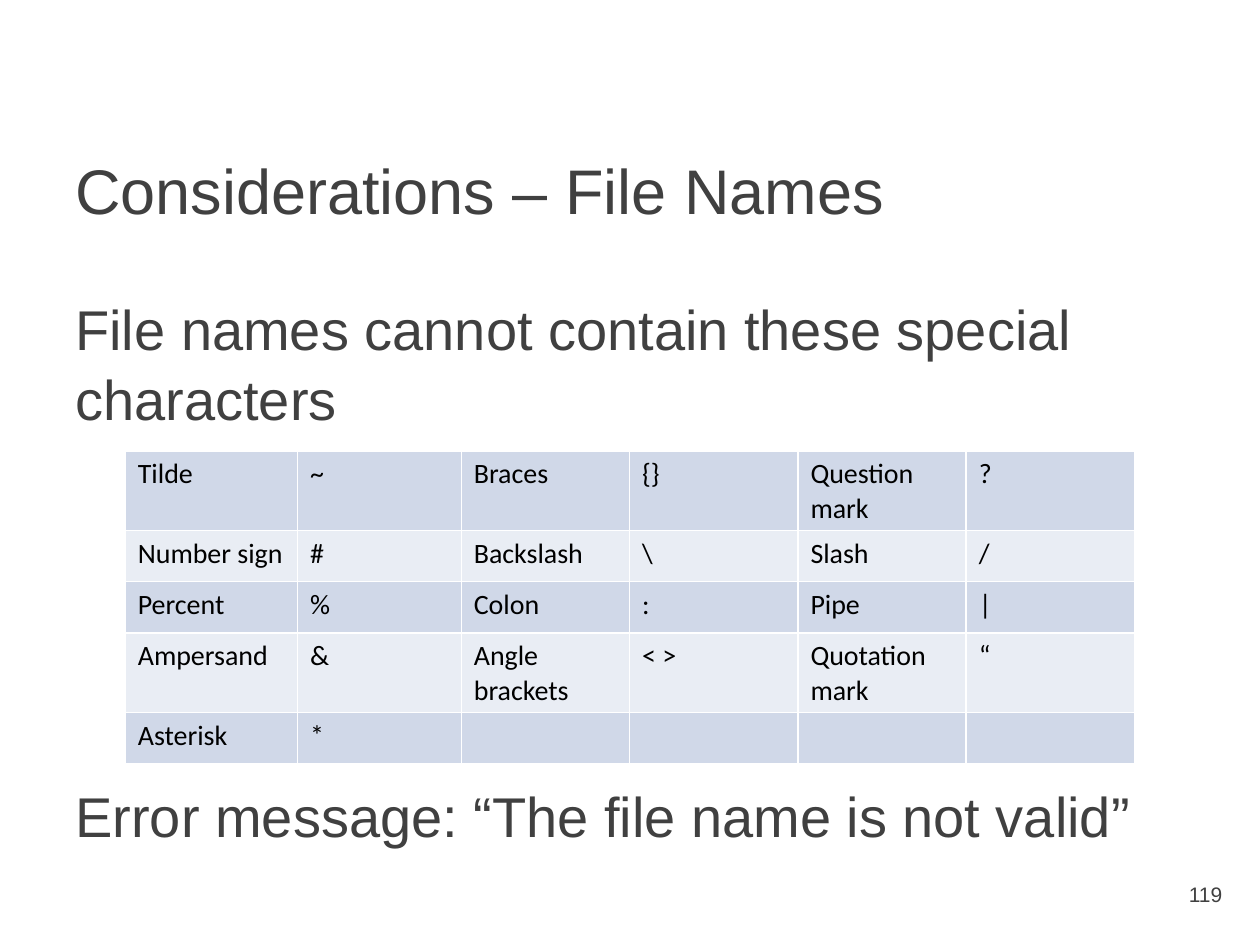
"""Build a slide listing the special characters that file names cannot contain."""
import pptx
import pptx.dml.color
import pptx.enum.text
import pptx.oxml
import pptx.oxml.ns
import pptx.util

Pt = pptx.util.Pt
ALIGN = pptx.enum.text.PP_ALIGN
ANCHOR = pptx.enum.text.MSO_ANCHOR

TITLE = "Considerations – File Names"
STATEMENTS = [
    "File names cannot contain these special characters",
    "Error message: “The file name is not valid”",
]
PAGE_NUMBER = "119"
CHARACTERS = [
    ("Tilde", "~", "Braces", "{}", "Question mark", "?"),
    ("Number sign", "#", "Backslash", "\\", "Slash", "/"),
    ("Percent", "%", "Colon", ":", "Pipe", "|"),
    ("Ampersand", "&", "Angle brackets", "< >", "Quotation mark", "“"),
    ("Asterisk", "*", "", "", "", ""),
]
COLUMN_WIDTHS = [98.4, 93.6, 96.2, 96.2, 96.2, 96.2]
ROW_HEIGHT = 29.2
BAND_FILLS = ["D0D8E8", "E9EDF4"]
GREY, BLACK, WHITE = "404040", "000000", "FFFFFF"


def color(value):
    return pptx.dml.color.RGBColor.from_string(value)


def write(frame, lines, size=16, font="Arial", fill=GREY, align=ALIGN.LEFT, gap=0, spacing=None):
    frame.word_wrap = True
    for index, line in enumerate(lines):
        para = frame.paragraphs[0] if index == 0 else frame.add_paragraph()
        para.alignment = align
        para.line_spacing = spacing
        if index:
            para.space_before = Pt(gap)
        para.font.size = Pt(size)
        span = para.add_run()
        span.text = line
        span.font.size = Pt(size)
        span.font.name = font
        span.font.color.rgb = color(fill)


def add_text(page, area, lines, anchor=ANCHOR.TOP, **style):
    box = page.shapes.add_textbox(*map(Pt, area))
    box.text_frame.vertical_anchor = anchor
    write(box.text_frame, lines, **style)


def add_borders(cell, fill):
    properties = cell._tc.get_or_add_tcPr()
    for index, side in enumerate(("lnL", "lnR", "lnT", "lnB")):
        properties.insert(index, pptx.oxml.parse_xml(
            f'<a:{side} {pptx.oxml.ns.nsdecls("a")} w="12700"><a:solidFill>'
            f'<a:srgbClr val="{fill}"/></a:solidFill></a:{side}>'))


def add_character_table(page, left, top):
    height = ROW_HEIGHT * len(CHARACTERS)
    table = page.shapes.add_table(
        len(CHARACTERS), len(COLUMN_WIDTHS),
        Pt(left), Pt(top), Pt(sum(COLUMN_WIDTHS)), Pt(height)).table
    table.first_row = False
    table.horz_banding = False
    for column, width in zip(table.columns, COLUMN_WIDTHS):
        column.width = Pt(width)
    for row_index, values in enumerate(CHARACTERS):
        table.rows[row_index].height = Pt(ROW_HEIGHT)
        for column_index, value in enumerate(values):
            cell = table.cell(row_index, column_index)
            cell.fill.solid()
            cell.fill.fore_color.rgb = color(BAND_FILLS[row_index % 2])
            add_borders(cell, WHITE)
            if value:
                write(cell.text_frame, [value], font="Calibri", fill=BLACK)


def main():
    deck = pptx.Presentation()
    deck.slide_width, deck.slide_height = Pt(720), Pt(540)
    page = deck.slides.add_slide(deck.slide_layouts[6])
    page.background.fill.solid()
    page.background.fill.fore_color.rgb = color(WHITE)
    add_text(page, (36, 63.4, 648, 90), [TITLE], anchor=ANCHOR.MIDDLE, size=36)
    add_text(page, (36, 163.4, 648, 324), STATEMENTS, size=32, gap=198, spacing=1.04)
    add_text(page, (662.4, 500.4, 43.2, 28.8), [PAGE_NUMBER], size=12, align=ALIGN.RIGHT)
    add_character_table(page, 71.6, 257.6)
    deck.save("out.pptx")


if __name__ == "__main__":
    main()
